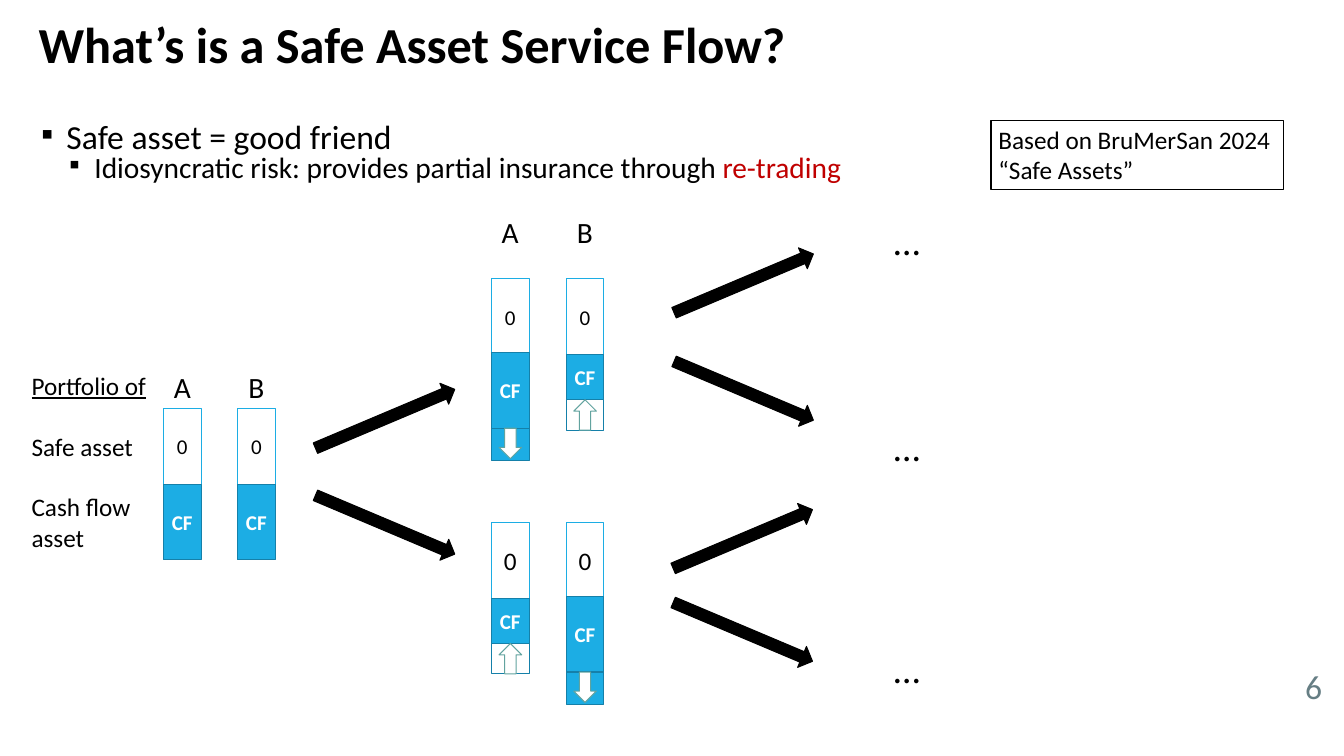
from dataclasses import dataclass

from lxml import etree
from pptx import Presentation
from pptx.dml.color import RGBColor
from pptx.enum.shapes import MSO_SHAPE
from pptx.enum.text import MSO_ANCHOR, MSO_AUTO_SIZE, PP_ALIGN
from pptx.oxml.ns import qn
from pptx.util import Cm, Pt

RECT, RIGHT = MSO_SHAPE.RECTANGLE, MSO_SHAPE.RIGHT_ARROW
DOWN, UP = MSO_SHAPE.DOWN_ARROW, MSO_SHAPE.UP_ARROW
TOP, MIDDLE = MSO_ANCHOR.TOP, MSO_ANCHOR.MIDDLE
LEFT, CENTER, RIGHT_ALIGN = PP_ALIGN.LEFT, PP_ALIGN.CENTER, PP_ALIGN.RIGHT
NO_AUTOFIT = MSO_AUTO_SIZE.NONE


@dataclass(frozen=True)
class Theme:
    font: str = "Calibri"
    ink: str = "000000"
    paper: str = "FFFFFF"
    accent: str = "1CADE4"
    accent_edge: str = "1580A9"
    trade_edge: str = "62A39F"
    emphasis: str = "C00000"
    page: str = "667E84"
    title: int = 48
    dots: int = 36
    body: int = 32
    detail: int = 28
    note: int = 24
    cell: int = 20


THEME = Theme()
UNIT, BAR_WIDTH = 2.54, 1.27


def apply(target, values):
    for name, value in values.items():
        setattr(target, name, value)


def write(paragraph, text, size, color=THEME.ink, **extra):
    run = paragraph.add_run()
    run.text = text
    apply(run.font, {"name": THEME.font, "size": Pt(size), **extra})
    run.font.color.rgb = RGBColor.from_string(color)


def write_lines(paragraph, lines, size):
    for i, line in enumerate(lines):
        if i:
            paragraph.add_line_break()
        write(paragraph, line, size)


def place(shape, box):
    apply(shape, dict(zip(("left", "top", "width", "height"), map(Cm, box))))


def draw(slide, kind, box, fill, edge, rotation=0):
    shape = slide.shapes.add_shape(kind, *map(Cm, box))
    shape.shadow.inherit = False
    shape.rotation = rotation
    if fill:
        shape.fill.solid()
        shape.fill.fore_color.rgb = RGBColor.from_string(fill)
    else:
        shape.fill.background()
    shape.line.color.rgb = RGBColor.from_string(edge)
    shape.line.width = Pt(1)
    return shape


def cell(slide, box, text, fill, edge, size, color, bold=False):
    frame = draw(slide, RECT, box, fill, edge).text_frame
    apply(frame, {"margin_left": 0, "margin_right": 0, "vertical_anchor": MIDDLE})
    frame.paragraphs[0].alignment = CENTER
    write(frame.paragraphs[0], text, size, color, bold=bold)


def label(slide, box, text, size, color=THEME.ink, align=LEFT, anchor=TOP):
    frame = slide.shapes.add_textbox(*map(Cm, box)).text_frame
    apply(frame, {"word_wrap": True, "vertical_anchor": anchor})
    frame.paragraphs[0].alignment = align
    write(frame.paragraphs[0], text, size, color)
    return frame


def bullet(paragraph, indent):
    props = paragraph._p.get_or_add_pPr()
    props.set("marL", str(Cm(indent)))
    props.set("indent", str(-Cm(0.84)))
    color = etree.SubElement(props, qn("a:buClr"))
    etree.SubElement(color, qn("a:srgbClr")).set("val", THEME.ink)
    etree.SubElement(props, qn("a:buFont")).set("typeface", THEME.font)
    etree.SubElement(props, qn("a:buChar")).set("char", "▪")


def heading(slide, box):
    title = slide.shapes.title
    place(title, box)
    apply(title.text_frame, {"vertical_anchor": MIDDLE, "auto_size": NO_AUTOFIT})
    line = title.text_frame.paragraphs[0]
    apply(line, {"alignment": LEFT, "line_spacing": 0.9})
    write(line, "What’s is a Safe Asset Service Flow?", THEME.title, bold=True)


def claims(slide, box):
    body = slide.placeholders[1]
    place(body, box)
    frame = body.text_frame
    apply(frame, {"vertical_anchor": TOP, "auto_size": NO_AUTOFIT})
    claim, reason = frame.paragraphs[0], frame.add_paragraph()
    for line, level, before, indent in ((claim, 0, 13.3, 0.84), (reason, 1, 6.7, 1.78)):
        apply(line, {"level": level, "line_spacing": 0.6, "space_before": Pt(before)})
        bullet(line, indent)
    write(claim, "Safe asset = good friend", THEME.body)
    write(reason, "Idiosyncratic risk: provides partial insurance through ", THEME.detail)
    write(reason, "re-trading", THEME.detail, THEME.emphasis)


def reference(slide, box):
    frame = draw(slide, RECT, box, THEME.paper, THEME.ink).text_frame
    apply(frame, {"word_wrap": False, "vertical_anchor": TOP})
    frame.paragraphs[0].alignment = LEFT
    write_lines(frame.paragraphs[0], ("Based on BruMerSan 2024", "“Safe Assets”"), THEME.note)


def legend(slide, box):
    frame = label(slide, box, "Portfolio of", THEME.note)
    frame.paragraphs[0].runs[0].font.underline = True
    for lines in (("Safe asset",), ("Cash flow", "asset")):
        entry = frame.add_paragraph()
        entry.space_before = Pt(29)
        write_lines(entry, lines, THEME.note)


def portfolio(slide, x, y, trade=None, size=THEME.cell):
    cell(slide, (x, y, BAR_WIDTH, UNIT), "0", THEME.paper, THEME.accent, size, THEME.ink)
    base = y + UNIT
    cash_top, cash_height = base, UNIT
    if trade == "buy":
        draw(slide, RECT, (x, base, BAR_WIDTH, 1.4 * UNIT), THEME.accent, THEME.accent_edge)
        cash_top = base - 0.06
    elif trade == "sell":
        draw(slide, RECT, (x, base, BAR_WIDTH, UNIT), None, THEME.accent_edge)
        cash_height = 0.6 * UNIT
    cell(slide, (x, cash_top, BAR_WIDTH, cash_height), "CF", THEME.accent,
         THEME.accent_edge, THEME.cell, THEME.paper, bold=True)
    if trade:
        kind = DOWN if trade == "buy" else UP
        draw(slide, kind, (x + 0.26, cash_top + cash_height, 0.76, 1.02),
             THEME.paper, THEME.trade_edge)


def agent_names(slide, columns, y):
    for name, x in zip("AB", columns):
        label(slide, (x + 0.1, y, 1.07, 1.45), name, THEME.detail, align=CENTER)


def fork(slide, x, up_y, down_y):
    for y, angle in ((up_y, -22.9), (down_y, 22.9)):
        draw(slide, RIGHT, (x, y, 5.08, 0.76), THEME.ink, THEME.ink, angle)


def continuations(slide, x, tops):
    for y in tops:
        label(slide, (x, y, 6.4, 1.8), "…", THEME.dots)


def main():
    deck = Presentation()
    apply(deck, {"slide_width": Cm(45.16), "slide_height": Cm(25.4)})
    slide = deck.slides.add_slide(deck.slide_layouts[1])
    heading(slide, (1.04, 0, 43.05, 3.18))
    claims(slide, (1.14, 4.24, 43.05, 21.1))
    reference(slide, (33.3, 4.06, 9.83, 2.31))
    legend(slide, (0.81, 12.32, 4.34, 6.4))

    start, later = (5.49, 7.98), (16.51, 19.02)
    for x in start:
        portfolio(slide, x, 13.73)
    for y, trades, size in ((9.37, ("buy", "sell"), THEME.cell),
                            (17.56, ("sell", "buy"), THEME.note)):
        for x, trade in zip(later, trades):
            portfolio(slide, x, y, trade, size)
    agent_names(slide, start, 12.29)
    agent_names(slide, later, 7.06)

    for x, up_y, down_y in ((10.4, 13.69, 17.25), (22.45, 9.14, 12.75), (22.42, 17.73, 20.85)):
        fork(slide, x, up_y, down_y)
    continuations(slide, 29.79, (7.19, 14.1, 21.56))
    label(slide, (41.94, 22.3, 2.74, 1.52), "6", THEME.body, THEME.page, RIGHT_ALIGN, MIDDLE)
    deck.save("out.pptx")


if __name__ == "__main__":
    main()
